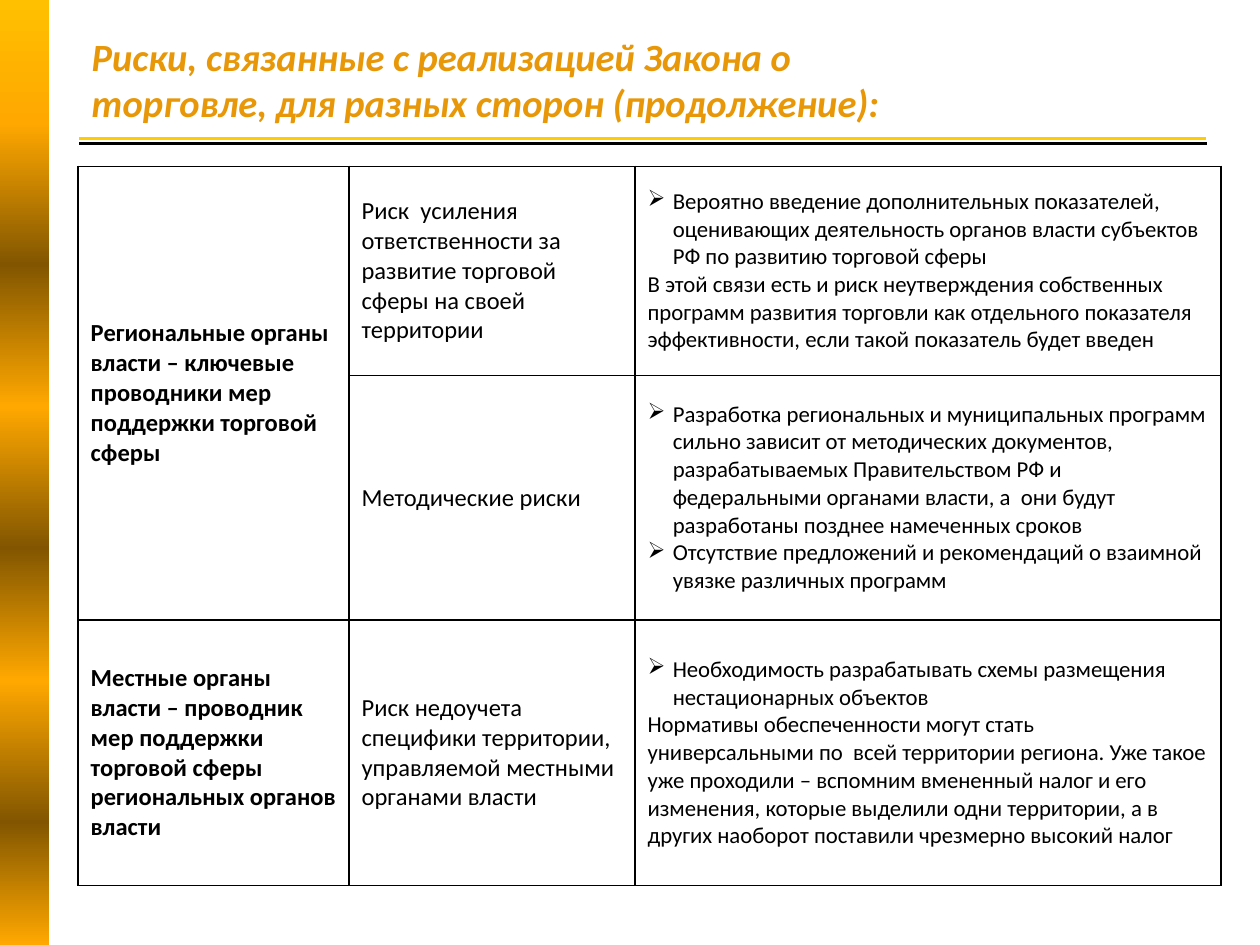
from lxml import etree
from pptx import Presentation
from pptx.dml.color import RGBColor
from pptx.enum.shapes import MSO_CONNECTOR, MSO_SHAPE
from pptx.enum.text import MSO_ANCHOR
from pptx.oxml import parse_xml
from pptx.oxml.ns import nsdecls, qn
from pptx.util import Emu, Inches, Pt

STRAIGHT = MSO_CONNECTOR.STRAIGHT
RECTANGLE = MSO_SHAPE.RECTANGLE
MIDDLE = MSO_ANCHOR.MIDDLE

FONT = "Calibri"
COLORS = {
    "black": "000000",
    "white": "FFFFFF",
    "title": "E79707",
    "yellow": "FFCC00",
    "gold": "FFC000",
    "orange": "FFA800",
    "brown": "825600",
}
BAND_STOPS = [
    (0, "gold"), (13, "orange"), (28, "brown"), (43, "orange"),
    (58, "brown"), (72, "orange"), (87, "brown"), (100, "orange"),
]

TITLE = "Риски, связанные с реализацией Закона о торговле, для разных сторон (продолжение):"
BULLET = "➢"
COLUMN_WIDTHS = [2.15, 2.27, 4.65]
ROW_HEIGHTS = [1.66, 1.94, 2.11]
# Each row: party, risk, details as (bulleted, text); None continues the party above.
ROWS = [
    (
        "Региональные органы власти – ключевые проводники мер поддержки торговой сферы",
        "Риск  усиления ответственности за развитие торговой сферы на своей территории",
        [
            (True, "Вероятно введение дополнительных показателей, оценивающих деятельность "
                   "органов власти субъектов РФ по развитию торговой сферы"),
            (False, "В этой связи есть и риск неутверждения собственных программ развития "
                    "торговли как отдельного показателя эффективности, если такой показатель "
                    "будет введен"),
        ],
    ),
    (
        None,
        "Методические риски",
        [
            (True, "Разработка региональных и муниципальных программ сильно зависит от "
                   "методических документов, разрабатываемых Правительством РФ и федеральными "
                   "органами власти, а  они будут разработаны позднее намеченных сроков"),
            (True, "Отсутствие предложений и рекомендаций о взаимной увязке различных программ"),
        ],
    ),
    (
        "Местные органы власти – проводник мер поддержки торговой сферы региональных "
        "органов власти",
        "Риск недоучета специфики территории, управляемой местными органами власти",
        [
            (True, "Необходимость разрабатывать схемы размещения нестационарных объектов"),
            (False, "Нормативы обеспеченности могут стать  универсальными по  всей территории "
                    "региона. Уже такое уже проходили – вспомним вмененный налог и его "
                    "изменения, которые выделили одни территории, а в других наоборот "
                    "поставили чрезмерно высокий налог"),
        ],
    ),
]


def rgb(name):
    return RGBColor.from_string(COLORS[name])


def style_runs(paragraph, size, color="black", bold=False, italic=False):
    for run in paragraph.runs:
        run.font.name = FONT
        run.font.size = Pt(size)
        run.font.bold = bold
        run.font.italic = italic
        run.font.color.rgb = rgb(color)


def add_rule(slide, y, right, color):
    line = slide.shapes.add_connector(
        STRAIGHT, Inches(0.63), Inches(y), Inches(right), Inches(y))
    line.line.color.rgb = rgb(color)
    line.line.width = Pt(1.75)
    etree.SubElement(line._element.spPr, qn("a:effectLst"))


def add_side_band(slide):
    band = slide.shapes.add_shape(RECTANGLE, 0, 0, Inches(0.39), Inches(7.5))
    band.shadow.inherit = False
    band.line.fill.background()
    band.fill.gradient()
    band.fill.gradient_angle = 270  # counter-clockwise, so top to bottom
    stops = band._element.spPr.find(".//" + qn("a:gsLst"))
    for stop in list(stops):
        stops.remove(stop)
    for position, color in BAND_STOPS:
        stop = etree.SubElement(stops, qn("a:gs"), pos=str(position * 1000))
        etree.SubElement(stop, qn("a:srgbClr"), val=COLORS[color])


def add_title(slide):
    box = slide.shapes.add_textbox(Inches(0.63), Inches(0.16), Inches(7.03), Inches(0.94))
    frame = box.text_frame
    frame.word_wrap = True
    frame.vertical_anchor = MIDDLE
    frame.text = TITLE
    paragraph = frame.paragraphs[0]
    style_runs(paragraph, 22, "title", bold=True, italic=True)
    shadow = parse_xml(
        f'<a:effectLst {nsdecls("a")}>'
        '<a:outerShdw blurRad="38100" dist="38100" dir="2700000" algn="tl">'
        f'<a:srgbClr val="{COLORS["black"]}"><a:alpha val="43000"/></a:srgbClr>'
        '</a:outerShdw></a:effectLst>')
    paragraph.runs[0].font._element.find(qn("a:solidFill")).addnext(shadow)


def set_borders(cell):
    properties = cell._tc.get_or_add_tcPr()
    for index, side in enumerate(("lnL", "lnR", "lnT", "lnB")):
        properties.insert(index, parse_xml(
            f'<a:{side} {nsdecls("a")} w="{Pt(1)}"><a:solidFill>'
            f'<a:srgbClr val="{COLORS["black"]}"/></a:solidFill></a:{side}>'))


def set_bullet(paragraph):
    properties = paragraph._p.get_or_add_pPr()
    properties.set("marL", str(Inches(0.2)))
    properties.set("indent", str(Inches(-0.2)))
    etree.SubElement(properties, qn("a:buChar"), char=BULLET)


def fill_details(cell, details):
    frame = cell.text_frame
    frame.text = "\n".join(text for _, text in details)
    for paragraph, (bulleted, _) in zip(frame.paragraphs, details):
        if bulleted:
            set_bullet(paragraph)
        style_runs(paragraph, 13)


def add_risk_table(slide):
    table = slide.shapes.add_table(
        len(ROWS), len(COLUMN_WIDTHS), Inches(0.62), Inches(1.32),
        Inches(sum(COLUMN_WIDTHS)), Inches(sum(ROW_HEIGHTS))).table
    table.first_row = table.horz_banding = False
    for column, width in zip(table.columns, COLUMN_WIDTHS):
        column.width = Inches(width)
    for row, height in zip(table.rows, ROW_HEIGHTS):
        row.height = Inches(height)
    for cell in table.iter_cells():
        cell.fill.solid()
        cell.fill.fore_color.rgb = rgb("white")
        cell.vertical_anchor = MIDDLE
        set_borders(cell)
    for index, (party, risk, details) in enumerate(ROWS):
        party_cell, risk_cell, details_cell = table.rows[index].cells
        if party is None:
            table.cell(index - 1, 0).merge(party_cell)
        else:
            party_cell.text_frame.text = party
            style_runs(party_cell.text_frame.paragraphs[0], 14, bold=True)
        risk_cell.text_frame.text = risk
        style_runs(risk_cell.text_frame.paragraphs[0], 14)
        fill_details(details_cell, details)


def main():
    presentation = Presentation()
    presentation.slide_width = Inches(10)
    presentation.slide_height = Inches(7.5)
    slide = presentation.slides.add_slide(presentation.slide_layouts[6])
    add_rule(slide, 1.14, 9.58, "black")
    add_rule(slide, 1.1, 9.57, "yellow")
    add_side_band(slide)
    add_title(slide)
    add_risk_table(slide)
    presentation.save("out.pptx")


if __name__ == "__main__":
    main()
